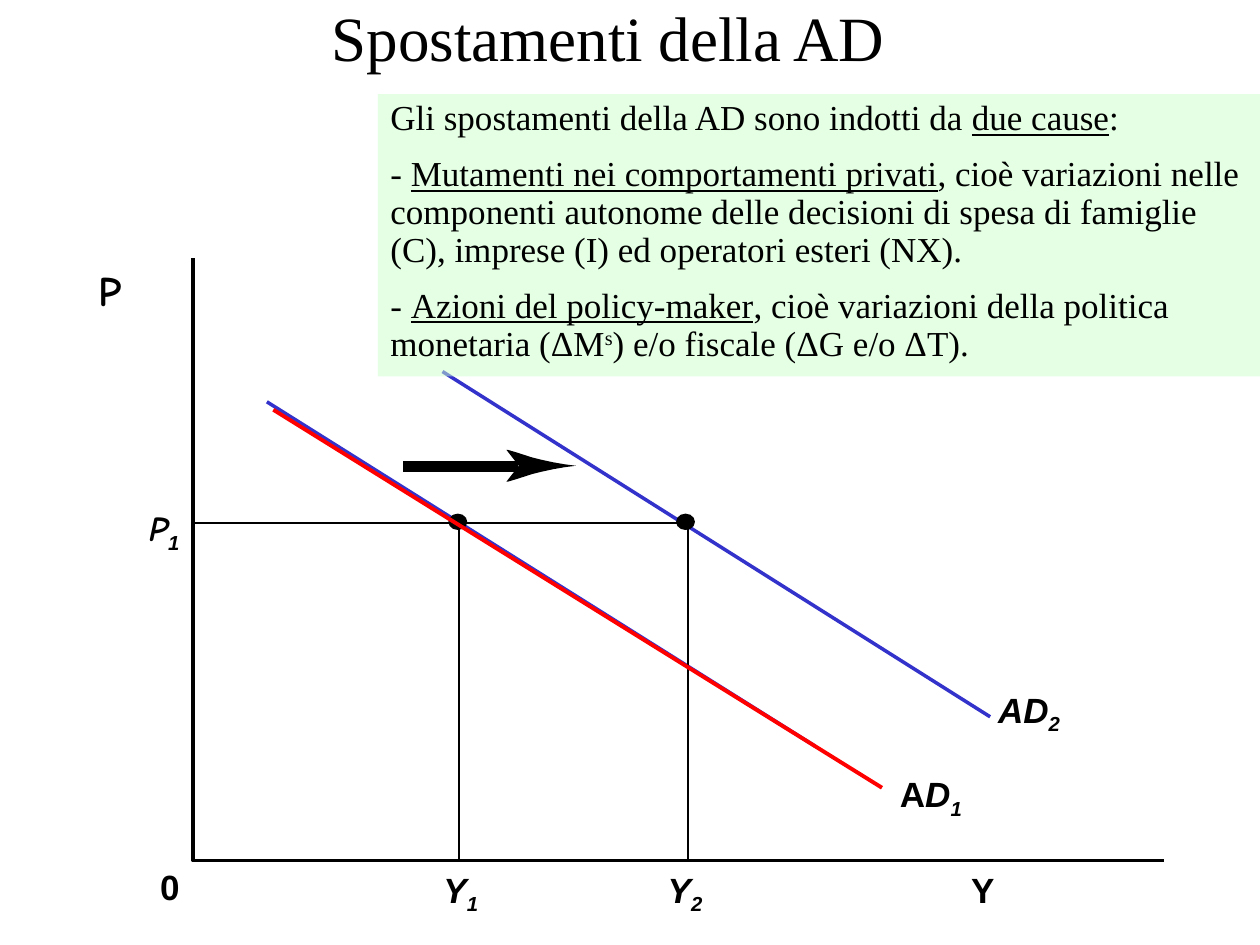
import pptx
import pptx.util
import pptx.dml.color
import pptx.enum.shapes
import pptx.enum.text
import pptx.oxml.ns
from lxml import etree
from pptx.util import Cm

BLACK, BLUE, RED, GREEN = "000000", "3333CC", "FF0000", "CCFFCC"
SERIF, SANS, COMIC = "Times New Roman", "Arial", "Comic Neue"

TITLE = "Spostamenti della AD"
CAUSES = [
    [("Gli spostamenti della AD sono indotti da ", ""), ("due cause", "u"), (":", "")],
    [("- ", ""), ("Mutamenti nei comportamenti privati", "u"),
     (", cioè variazioni nelle componenti autonome delle decisioni di spesa "
      "di famiglie (C), imprese (I) ed operatori esteri (NX).", "")],
    [("- ", ""), ("Azioni del policy-maker", "u"),
     (", cioè variazioni della politica monetaria (ΔM", ""), ("s", "^"),
     (") e/o fiscale (ΔG e/o ΔT).", "")],
]
LABELS = [
    (19.58, 17.5, 0.48, [("Y", "b", SANS, 20)]),
    (1.98, 5.33, 0.46, [("P", "b", COMIC, 24)]),
    (3.23, 17.45, 0.38, [("0", "b", SANS, 20)]),
    (18.14, 15.57, 1.27, [("A", "b", SANS, 20), ("D", "bi", SANS, 20), ("1", "bi_", SANS, 20)]),
    (3, 10.21, 0.64, [("P", "bi", COMIC, 20), ("1", "bi_", SANS, 20)]),
    (8.94, 17.5, 0.74, [("Y", "bi", SANS, 20), ("1", "bi_", SANS, 20)]),
    (13.46, 17.5, 0.74, [("Y", "bi", SANS, 20), ("2", "bi_", SANS, 20)]),
    (20.12, 13.87, 1.27, [("AD", "bi", SANS, 20), ("2", "bi_", SANS, 20)]),
]
AXES = [(3.89, 5.21), (3.89, 17.35), (23.47, 17.35)]
FIRST_GUIDE = [(3.91, 10.54), (9.25, 10.54), (9.25, 17.32)]
LINES = [
    (8.13, 9.4, 10.44, 9.4, BLACK, 6),
    (5.38, 8.1, 16.43, 15.04, BLUE, 2),
    (8.92, 7.49, 19.96, 14.45, BLUE, 2),
    (9.32, 10.54, 13.92, 10.54, BLACK, 1),
    (13.87, 10.64, 13.87, 17.35, BLACK, 1),
]
RED_CURVE = (5.51, 8.26, 17.78, 15.88, RED, 2.25)
ARROW_MIDDLE = 9.39
ARROW_EDGE = [(10.21, 0.32), (10.24, 0.32), (10.41, 0.27), (10.72, 0.17),
              (10.92, 0.12), (11.15, 0.07), (11.38, 0.03)]
ARROW_NOTCH, ARROW_TIP = 10.46, 11.61
POINTS = [(13.82, 10.52), (9.23, 10.52)]
POINT_WIDTH, POINT_HEIGHT = 0.38, 0.33


def color(value):
    return pptx.dml.color.RGBColor.from_string(value)


def paint(shape, fill=None, line=None, width=1):
    shape.shadow.inherit = False
    if fill:
        shape.fill.solid()
        shape.fill.fore_color.rgb = color(fill)
    else:
        shape.fill.background()
    if line:
        shape.line.color.rgb = color(line)
        shape.line.width = pptx.util.Pt(width)
    else:
        shape.line.fill.background()


def add_span(para, text, style, font, size):
    span = para.add_run()
    span.text = text
    span.font.name = font
    span.font.size = pptx.util.Pt(size)
    span.font.color.rgb = color(BLACK)
    span.font.bold = "b" in style
    span.font.italic = "i" in style
    span.font.underline = "u" in style
    for mark, shift in (("_", "-25000"), ("^", "30000")):
        if mark in style:
            span.font._element.set("baseline", shift)


def add_label(page, left, top, width, spans):
    box = page.shapes.add_textbox(Cm(left), Cm(top), Cm(width), Cm(0.84))
    frame = box.text_frame
    frame.word_wrap = False
    frame.margin_left = frame.margin_right = frame.margin_top = frame.margin_bottom = 0
    for span in spans:
        add_span(frame.paragraphs[0], *span)


def add_line(page, x1, y1, x2, y2, line, width):
    connector = page.shapes.add_connector(
        pptx.enum.shapes.MSO_CONNECTOR.STRAIGHT, Cm(x1), Cm(y1), Cm(x2), Cm(y2))
    connector.line.color.rgb = color(line)
    connector.line.width = pptx.util.Pt(width)
    etree.SubElement(connector._element.spPr, pptx.oxml.ns.qn("a:effectLst"))


def add_outline(page, points, close=False, **look):
    corners = [(Cm(x), Cm(y)) for x, y in points]
    builder = page.shapes.build_freeform(*corners[0])
    builder.add_line_segments(corners[1:], close=close)
    paint(builder.convert_to_shape(), **look)


def add_title(page):
    box = page.shapes.add_textbox(Cm(1.47), 0, Cm(21.59), Cm(1.47))
    frame = box.text_frame
    frame.word_wrap = True
    frame.vertical_anchor = pptx.enum.text.MSO_ANCHOR.MIDDLE
    para = frame.paragraphs[0]
    para.alignment = pptx.enum.text.PP_ALIGN.CENTER
    add_span(para, TITLE, "", SERIF, 36)


def add_causes(page):
    box = page.shapes.add_shape(
        pptx.enum.shapes.MSO_SHAPE.RECTANGLE, Cm(7.62), Cm(1.9), Cm(17.78), Cm(5.69))
    paint(box, fill=GREEN)
    tint = box._element.spPr.find(".//" + pptx.oxml.ns.qn("a:srgbClr"))
    etree.SubElement(tint, pptx.oxml.ns.qn("a:alpha"), val="50000")
    frame = box.text_frame
    frame.word_wrap = True
    frame.vertical_anchor = pptx.enum.text.MSO_ANCHOR.TOP
    for index, spans in enumerate(CAUSES):
        para = frame.add_paragraph() if index else frame.paragraphs[0]
        para.alignment = pptx.enum.text.PP_ALIGN.LEFT
        para.line_spacing = 0.9
        para.space_before = pptx.util.Pt(10.5)
        for text, style in spans:
            add_span(para, text, style, SERIF, 20)


def main():
    deck = pptx.Presentation()
    deck.slide_width, deck.slide_height = Cm(25.4), Cm(19.05)
    page = deck.slides.add_slide(deck.slide_layouts[6])
    add_title(page)
    for label in LABELS:
        add_label(page, *label)
    add_outline(page, AXES, line=BLACK, width=2)
    add_outline(page, FIRST_GUIDE, line=BLACK, width=1)
    for line in LINES:
        add_line(page, *line)
    upper = [(x, ARROW_MIDDLE - rise) for x, rise in ARROW_EDGE]
    lower = [(x, ARROW_MIDDLE + rise) for x, rise in reversed(ARROW_EDGE)]
    head = [(ARROW_NOTCH, ARROW_MIDDLE), *upper, (ARROW_TIP, ARROW_MIDDLE), *lower]
    add_outline(page, head, close=True, fill=BLACK)
    for x, y in POINTS:
        dot = page.shapes.add_shape(
            pptx.enum.shapes.MSO_SHAPE.OVAL, Cm(x - POINT_WIDTH / 2),
            Cm(y - POINT_HEIGHT / 2), Cm(POINT_WIDTH), Cm(POINT_HEIGHT))
        paint(dot, fill=BLACK)
    add_causes(page)
    add_line(page, *RED_CURVE)
    deck.save("out.pptx")


if __name__ == "__main__":
    main()
